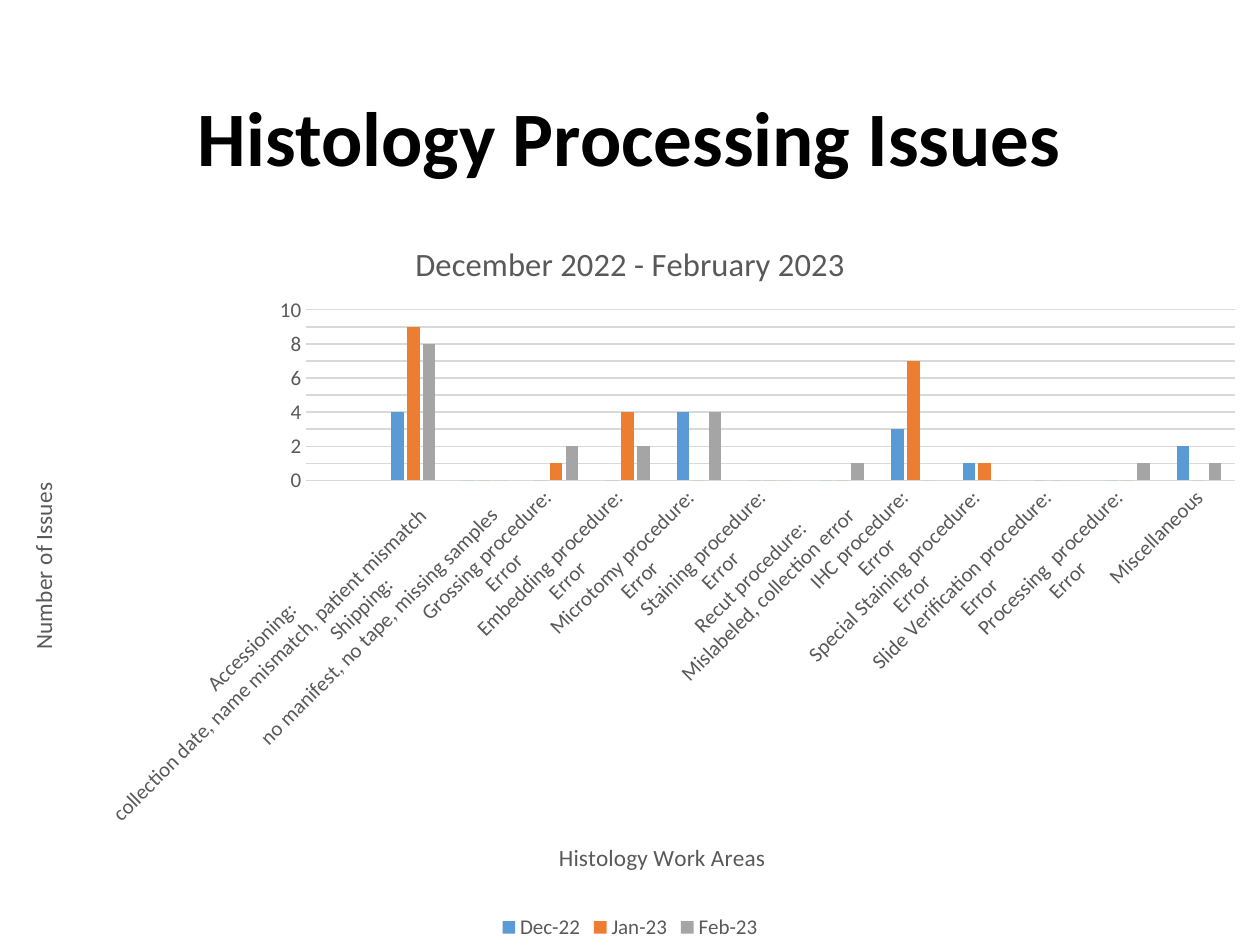
from lxml.etree import SubElement
from pptx import Presentation
from pptx.chart.data import CategoryChartData
from pptx.dml.color import RGBColor
from pptx.enum.chart import XL_CHART_TYPE, XL_LEGEND_POSITION, XL_TICK_MARK
from pptx.enum.text import MSO_ANCHOR, PP_ALIGN
from pptx.oxml.ns import qn
from pptx.util import Pt

BLACK = RGBColor(0x00, 0x00, 0x00)
GREY = RGBColor(0x59, 0x59, 0x59)
GRID = RGBColor(0xD9, 0xD9, 0xD9)
BLUE = RGBColor(0x5B, 0x9B, 0xD5)
ORANGE = RGBColor(0xED, 0x7D, 0x31)
SILVER = RGBColor(0xA5, 0xA5, 0xA5)
FONT = "Calibri"

WORK_AREAS = [
    "",
    "Accessioning:\ncollection date, name mismatch, patient mismatch",
    "Shipping:\nno manifest, no tape, missing samples",
    "Grossing procedure:\nError",
    "Embedding procedure:\nError",
    "Microtomy procedure:\nError",
    "Staining procedure:\nError",
    "Recut procedure:\nMislabeled, collection error",
    "IHC procedure:\nError",
    "Special Staining procedure:\nError",
    "Slide Verification procedure:\nError",
    "Processing  procedure:\nError",
    "Miscellaneous",
]
MONTHS = [
    ("Dec-22", BLUE, [None, 4, 0, 0, 0, 4, 0, 0, 3, 1, 0, 0, 2]),
    ("Jan-23", ORANGE, [None, 9, 0, 1, 4, 0, 0, 0, 7, 1, 0, 0, 0]),
    ("Feb-23", SILVER, [None, 8, 0, 2, 2, 4, 0, 1, 0, 0, 0, 1, 1]),
]


def set_attrs(obj, **values):
    for name, value in values.items():
        setattr(obj, name, value)


def set_font(font, size, color=GREY, bold=False):
    set_attrs(font, name=FONT, size=Pt(size), bold=bold)
    font.color.rgb = color


def set_layout(element, index, frame, inner=False, **lengths):
    for old in element.findall(qn("c:layout")):
        element.remove(old)
    layout = element.makeelement(qn("c:layout"))
    element.insert(index, layout)
    manual = SubElement(layout, qn("c:manualLayout"))
    values = {"layoutTarget": "inner"} if inner else {}
    values.update(xMode="edge", yMode="edge")
    for tag, length in lengths.items():
        whole = frame.width if tag in "xw" else frame.height
        values[tag] = Pt(length) / whole
    for tag, value in values.items():
        SubElement(manual, qn(f"c:{tag}")).set("val", str(value))


def set_rotation(element, degrees):
    body = element.find(f".//{qn('a:bodyPr')}")
    body.set("rot", str(degrees * 60000))
    body.set("vert", "horz")


def add_chart_title(title, frame, text, size, x, y):
    p = title.text_frame.paragraphs[0]
    r = p.add_run()
    r.text = text
    set_font(r.font, size)
    set_layout(title._element, 1, frame, x=x, y=y)


def add_title(slide, left, top, width, height):
    sp = slide.shapes.title
    set_attrs(sp, left=Pt(left), top=Pt(top), width=Pt(width), height=Pt(height))
    tf = sp.text_frame
    set_attrs(tf, word_wrap=True, vertical_anchor=MSO_ANCHOR.MIDDLE)
    p = tf.paragraphs[0]
    set_attrs(p, text="Histology Processing Issues", alignment=PP_ALIGN.CENTER,
              line_spacing=0.9)
    set_font(p.runs[0].font, 44, BLACK, True)


def format_axes(chart, frame):
    cat, val = chart.category_axis, chart.value_axis
    for axis in (cat, val):
        set_attrs(axis, major_tick_mark=XL_TICK_MARK.NONE,
                  minor_tick_mark=XL_TICK_MARK.NONE)
        set_font(axis.tick_labels.font, 12)
    set_rotation(cat._element.find(qn("c:txPr")), -45)
    set_attrs(val, minimum_scale=0, maximum_scale=10, major_unit=1,
              has_major_gridlines=True)
    for line in (cat.format.line, val.major_gridlines.format.line):
        line.color.rgb = GRID
        line.width = Pt(0.75)
    val.format.line.fill.background()
    add_chart_title(cat.axis_title, frame, "Histology Work Areas", 13.3, 317, 356)
    add_chart_title(val.axis_title, frame, "Number of Issues", 13.3, 13, 151)
    set_rotation(val.axis_title._element, -90)


def add_issues_chart(slide, left, top, width, height):
    data = CategoryChartData()
    data.categories = WORK_AREAS
    for name, _, values in MONTHS:
        data.add_series(name, values)
    frame = slide.shapes.add_chart(
        XL_CHART_TYPE.COLUMN_CLUSTERED, Pt(left), Pt(top), Pt(width), Pt(height), data
    )
    chart = frame.chart
    set_font(chart.font, 10, BLACK)
    add_chart_title(chart.chart_title, frame, "December 2022 - February 2023", 18.6, 234, 12)
    format_axes(chart, frame)
    plot = chart.plots[0]
    set_attrs(plot, gap_width=219, overlap=-27, vary_by_categories=False)
    for series, (_, color, _) in zip(plot.series, MONTHS):
        series.format.fill.solid()
        series.format.fill.fore_color.rgb = color
    chart.has_legend = True
    set_attrs(chart.legend, position=XL_LEGEND_POSITION.BOTTOM, include_in_layout=False)
    set_font(chart.legend.font, 12)
    plot_area = chart._chartSpace.find(f".//{qn('c:plotArea')}")
    set_layout(plot_area, 0, frame, inner=True, x=175, y=54.7, w=530.6, h=97.4)


def main():
    prs = Presentation()
    set_attrs(prs, slide_width=Pt(720), slide_height=Pt(540))
    slide = prs.slides.add_slide(prs.slide_layouts[5])
    add_title(slide, 49.5, 28.8, 621, 104.4)
    add_issues_chart(slide, 0, 122.4, 720, 417.6)
    prs.save("out.pptx")


if __name__ == "__main__":
    main()
